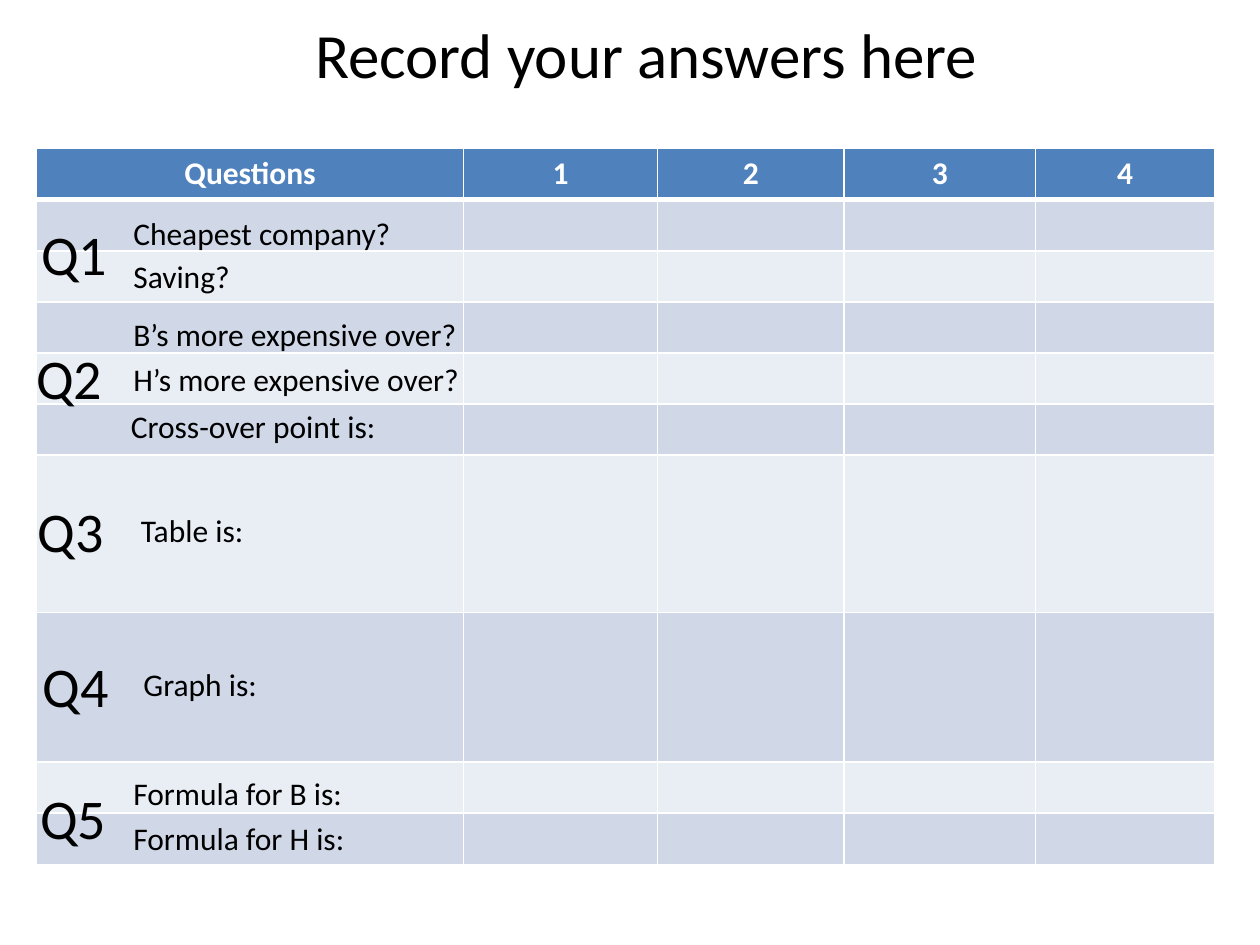
from lxml.etree import SubElement
from pptx import Presentation
from pptx.dml.color import RGBColor
from pptx.enum.text import MSO_ANCHOR, MSO_AUTO_SIZE, PP_ALIGN
from pptx.oxml.ns import qn
from pptx.util import Inches, Pt

WHITE = RGBColor(0xFF, 0xFF, 0xFF)
BLACK = RGBColor(0x00, 0x00, 0x00)
HEADER_BLUE = RGBColor(0x4F, 0x81, 0xBD)
BANDS = RGBColor(0xD0, 0xD8, 0xE8), RGBColor(0xE9, 0xED, 0xF4)
FONT = "Calibri"

HEADINGS = ["Questions", "1", "2", "3", "4"]
COLUMN_WIDTHS = [3.39, 1.54, 1.48, 1.52, 1.42]
ROW = 0.405
ROW_HEIGHTS = [ROW] * 6 + [1.25, 1.19] + [ROW] * 2

# Question label with its left and top, then each prompt with its left and top
QUESTIONS = [
    (("Q1", 0.23, 1.69), [("Cheapest company?", 0.96, 1.65), ("Saving?", 0.96, 1.99)]),
    (("Q2", 0.19, 2.68), [("B’s more expensive over?", 0.96, 2.45),
                          ("H’s more expensive over?", 0.96, 2.81),
                          ("Cross-over point is:", 0.94, 3.18)]),
    (("Q3", 0.2, 3.89), [("Table is:", 1.02, 4.01)]),
    (("Q4", 0.24, 5.12), [("Graph is:", 1.04, 5.23)]),
    (("Q5", 0.22, 6.17), [("Formula for B is:", 0.96, 6.09),
                          ("Formula for H is:", 0.96, 6.45)]),
]
PROMPT_WIDTHS = {
    "Cheapest company?": 2.27, "Saving?": 0.98, "B’s more expensive over?": 2.8,
    "H’s more expensive over?": 2.82, "Cross-over point is:": 2.16,
    "Table is:": 1.03, "Graph is:": 1.11,
    "Formula for B is:": 1.88, "Formula for H is:": 1.9,
}


def format_text(frame, size, color, bold=False):
    for para in frame.paragraphs:
        for span in para.runs:
            span.font.name = FONT
            span.font.size = Pt(size)
            span.font.bold = bold
            span.font.color.rgb = color


def add_title(page, left, top, width, height):
    title = page.shapes.title
    title.left, title.top, title.width, title.height = map(
        Inches, (left, top, width, height))
    frame = title.text_frame
    frame.text = "Record your answers here"
    frame.word_wrap = False
    frame.auto_size = MSO_AUTO_SIZE.NONE
    frame.vertical_anchor = MSO_ANCHOR.TOP
    frame.paragraphs[0].alignment = PP_ALIGN.LEFT
    format_text(frame, 36, BLACK)


def set_borders(cell, widths):
    """Draw white borders; widths maps a side (L, R, T, B) to points."""
    properties = cell._tc.get_or_add_tcPr()
    for side, width in widths.items():
        line = SubElement(properties, qn(f"a:ln{side}"), w=str(Pt(width)))
        fill = SubElement(line, qn("a:solidFill"))
        SubElement(fill, qn("a:srgbClr"), val=str(WHITE))


def add_answer_table(page, left, top, width, height):
    table = page.shapes.add_table(
        len(ROW_HEIGHTS), len(HEADINGS),
        Inches(left), Inches(top), Inches(width), Inches(height)).table
    for column, share in zip(table.columns, COLUMN_WIDTHS):
        column.width = Inches(width * share / sum(COLUMN_WIDTHS))
    for row_index, (row, share) in enumerate(zip(table.rows, ROW_HEIGHTS)):
        row.height = Inches(height * share / sum(ROW_HEIGHTS))
        for cell in row.cells:
            set_borders(cell, {"L": 1, "R": 1, "T": 3 if row_index == 1 else 1,
                               "B": 3 if row_index == 0 else 1})
            cell.fill.solid()
            cell.fill.fore_color.rgb = BANDS[(row_index - 1) % 2] if row_index else HEADER_BLUE
    for cell, heading in zip(table.rows[0].cells, HEADINGS):
        cell.text_frame.text = heading
        cell.text_frame.paragraphs[0].alignment = PP_ALIGN.CENTER
        format_text(cell.text_frame, 18, WHITE, bold=True)


def add_label(group, text, size, left, top, width, height):
    box = group.shapes.add_textbox(
        Inches(left), Inches(top), Inches(width), Inches(height))
    frame = box.text_frame
    frame.text = text
    frame.word_wrap = False
    frame.auto_size = MSO_AUTO_SIZE.SHAPE_TO_FIT_TEXT
    format_text(frame, size, BLACK)


def add_question(page, label, prompts):
    group = page.shapes.add_group_shape()
    name, left, top = label
    add_label(group, name, 32, left, top, 0.73, 0.64)
    for prompt, left, top in prompts:
        add_label(group, prompt, 18, left, top, PROMPT_WIDTHS[prompt], 0.4)


def main():
    deck = Presentation()
    deck.slide_width, deck.slide_height = Inches(10), Inches(7.5)
    page = deck.slides.add_slide(deck.slide_layouts[5])
    add_answer_table(page, 0.29, 1.18, 9.35, 5.67)
    add_title(page, 2.4, 0.07, 5.51, 0.71)
    for label, prompts in QUESTIONS:
        add_question(page, label, prompts)
    deck.save("out.pptx")


if __name__ == "__main__":
    main()
